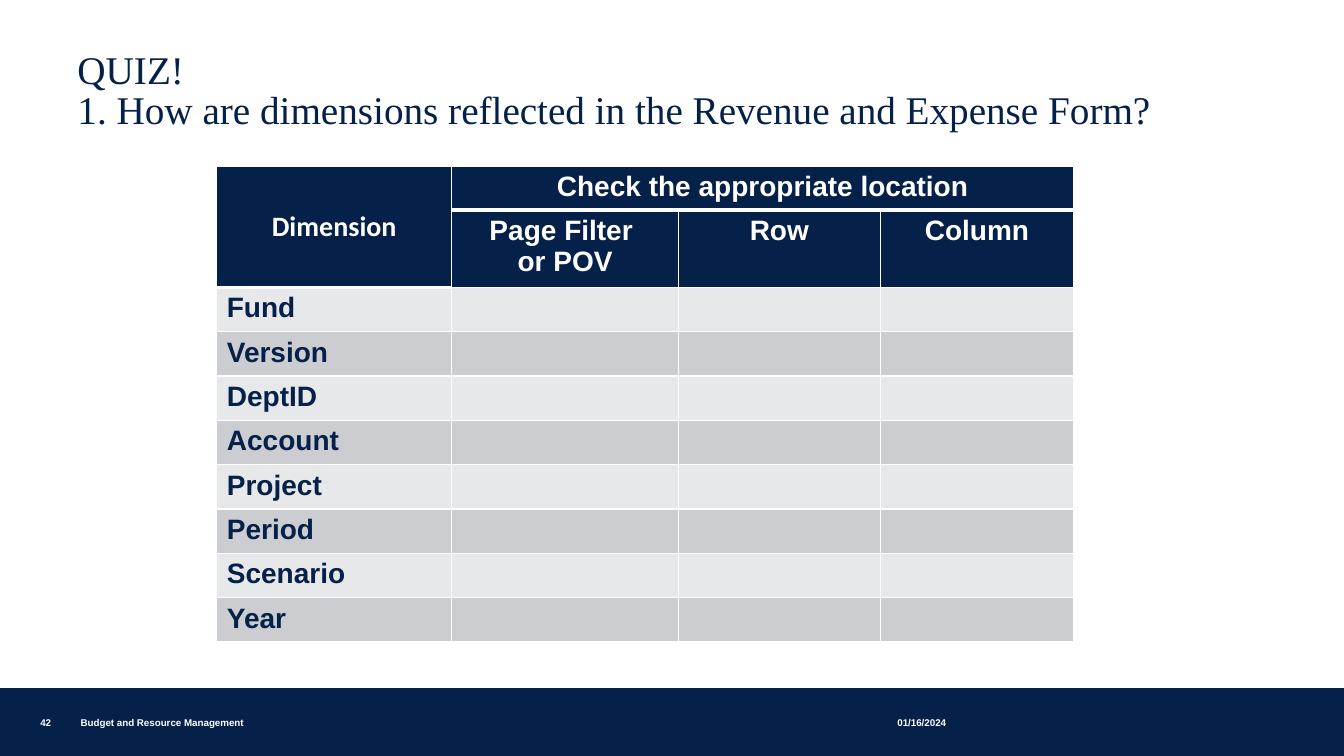
import pptx
import pptx.util
import pptx.dml.color
import pptx.enum.shapes
import pptx.enum.text
import pptx.oxml
from pptx.util import Inches

COLORS = {"navy": "052049", "white": "FFFFFF", "light": "E7E8E9", "dark": "CCCDD0"}
ALIGN = pptx.enum.text.PP_ALIGN
ANCHOR = pptx.enum.text.MSO_ANCHOR
NS = "http://schemas.openxmlformats.org/drawingml/2006/main"


def color(name):
    return pptx.dml.color.RGBColor.from_string(COLORS[name])


def write(frame, text, size=20, font="Arial", tint="white", bold=True,
          align=ALIGN.LEFT, lead=None):
    """Fill a text frame; newline starts a paragraph, \\v breaks a line."""
    frame.text = text
    for para in frame.paragraphs:
        para.alignment = align
        if lead:
            para.line_spacing = lead
        for run in para.runs:
            run.font.size = pptx.util.Pt(size)
            run.font.name = font
            run.font.bold = bold
            run.font.color.rgb = color(tint)


class Deck:
    def __init__(self):
        self.show = pptx.Presentation()
        self.show.slide_width = Inches(13.33)
        self.show.slide_height = Inches(7.5)
        self.slide = self.show.slides.add_slide(self.show.slide_layouts[6])

    def bar(self, *box):
        shape = self.slide.shapes.add_shape(
            pptx.enum.shapes.MSO_SHAPE.RECTANGLE, *map(Inches, box))
        shape.shadow.inherit = False
        shape.fill.solid()
        shape.fill.fore_color.rgb = color("navy")
        shape.line.color.rgb = color("navy")
        shape.line.width = pptx.util.Pt(1.5)

    def text(self, text, *box, pad=True, anchor=ANCHOR.TOP, **style):
        frame = self.slide.shapes.add_textbox(*map(Inches, box)).text_frame
        frame.word_wrap = True
        frame.vertical_anchor = anchor
        if not pad:
            frame.margin_left = frame.margin_right = 0
            frame.margin_top = frame.margin_bottom = 0
        write(frame, text, **style)

    def table(self, left, top, widths, heights):
        table = self.slide.shapes.add_table(
            len(heights), len(widths), Inches(left), Inches(top),
            Inches(sum(widths)), Inches(sum(heights))).table
        for col, width in zip(table.columns, widths):
            col.width = Inches(width)
        for row, height in zip(table.rows, heights):
            row.height = Inches(height)
        return table

    def cell(self, cell, fill, base=1):
        """Paint a cell and rule it in white; base is the bottom line width."""
        props = cell._tc.get_or_add_tcPr()
        for side, width in (("L", 1), ("R", 1), ("T", 1), ("B", base)):
            props.append(pptx.oxml.parse_xml(
                f'<a:ln{side} xmlns:a="{NS}" w="{pptx.util.Pt(width)}"><a:solidFill>'
                f'<a:srgbClr val="{COLORS["white"]}"/></a:solidFill></a:ln{side}>'))
        cell.fill.solid()
        cell.fill.fore_color.rgb = color(fill)


def main():
    deck = Deck()

    # Footer bar and title
    deck.bar(0, 6.84, 13.33, 0.66)
    deck.text("QUIZ!\v1. How are dimensions reflected in the Revenue and Expense Form?",
              0.67, 0.47, 11.8, 0.86, size=28, font="Times New Roman",
              tint="navy", bold=False, lead=0.85)

    # Quiz table
    names = ["Fund", "Version", "DeptID", "Account",
             "Project", "Period", "Scenario", "Year"]
    grid = deck.table(2.15, 1.65, [2.33, 2.25, 2, 1.92],
                      [0.41, 0.72] + [0.44] * len(names))
    for row in range(len(names) + 2):
        fill = "navy" if row < 2 else ("light", "dark")[row % 2]
        for col in range(4):
            thick = row == 0 or (row, col) == (1, 0)
            deck.cell(grid.cell(row, col), fill, 3 if thick else 1)

    # Table headings
    grid.cell(0, 0).merge(grid.cell(1, 0))
    grid.cell(0, 1).merge(grid.cell(0, 3))
    grid.cell(0, 0).vertical_anchor = ANCHOR.MIDDLE
    write(grid.cell(0, 0).text_frame, "Dimension", font="Calibri", align=ALIGN.CENTER)
    write(grid.cell(0, 1).text_frame, "Check the appropriate location",
          align=ALIGN.CENTER)
    for col, head in enumerate(["Page Filter \nor POV", "Row", "Column"], 1):
        write(grid.cell(1, col).text_frame, head, align=ALIGN.CENTER)
    for row, name in enumerate(names, 2):
        write(grid.cell(row, 0).text_frame, name, tint="navy")

    # Footer texts
    for text, left, top, width, height in (
            ("42", 0.4, 7.06, 0.36, 0.17),
            ("Budget and Resource Management", 0.8, 7.08, 6.29, 0.15),
            ("01/16/2024", 8.9, 7.06, 1.35, 0.17)):
        deck.text(text, left, top, width, height, pad=False,
                  anchor=ANCHOR.BOTTOM, size=7)

    deck.show.save("out.pptx")


if __name__ == "__main__":
    main()
